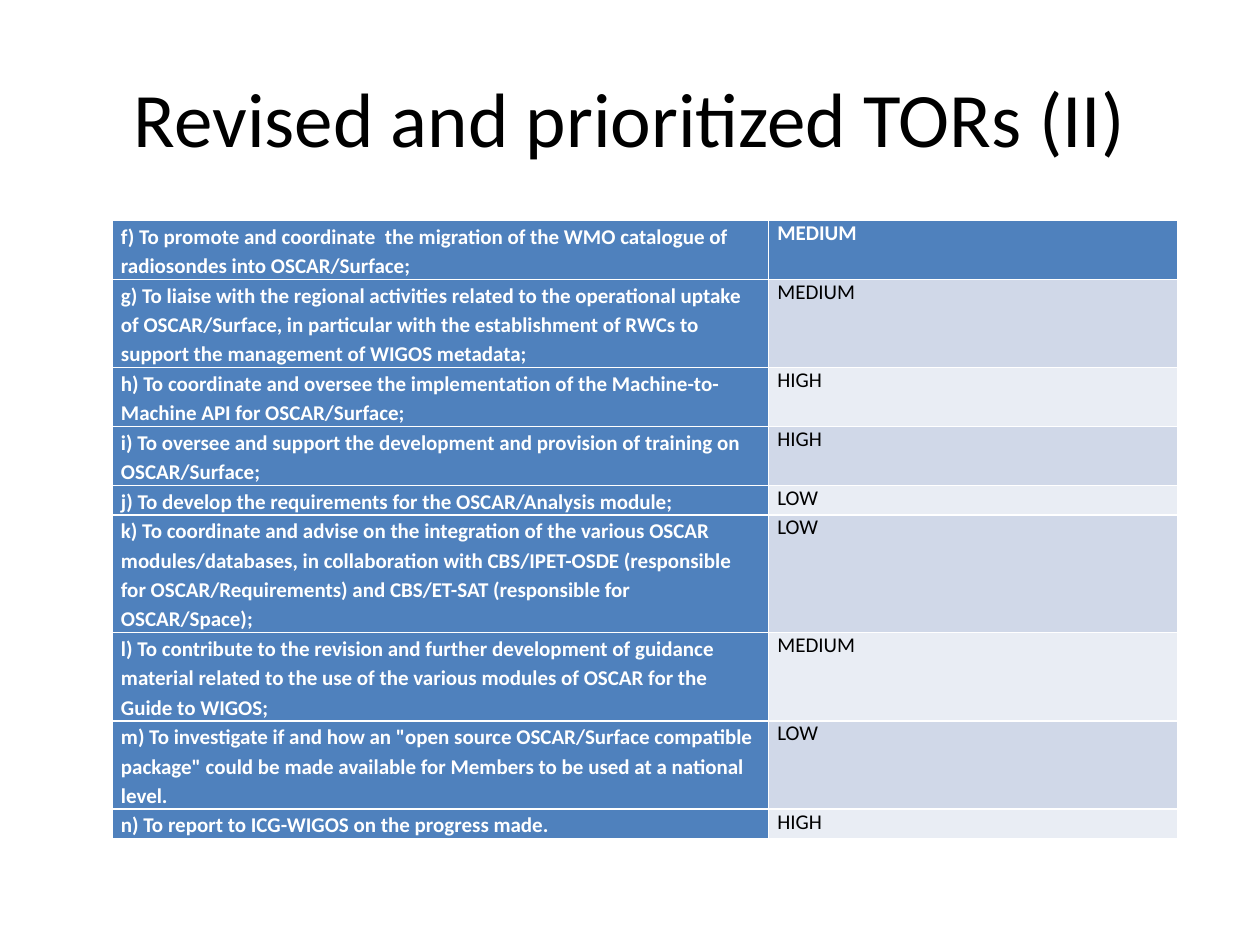
from pptx import Presentation
from pptx.dml.color import RGBColor
from pptx.enum.text import MSO_ANCHOR, PP_ALIGN
from pptx.util import Inches, Pt

CENTER = PP_ALIGN.CENTER
MIDDLE = MSO_ANCHOR.MIDDLE
WHITE = RGBColor(0xFF, 0xFF, 0xFF)
BLACK = RGBColor(0x00, 0x00, 0x00)
BLUE = RGBColor(0x4F, 0x81, 0xBD)
BAND_DARK = RGBColor(0xD0, 0xD8, 0xE8)
BAND_LIGHT = RGBColor(0xE9, 0xED, 0xF4)

LINE_HEIGHT = 0.23
COLUMN_WIDTHS = (5.21, 3.25)
TERMS = [
    ("f) To promote and coordinate  the migration of the WMO catalogue of "
     "radiosondes into OSCAR/Surface;", "MEDIUM", 2),
    ("g) To liaise with the regional activities related to the operational uptake "
     "of OSCAR/Surface, in particular with the establishment of RWCs to support "
     "the management of WIGOS metadata;", "MEDIUM", 3),
    ("h) To coordinate and oversee the implementation of the Machine-to-Machine "
     "API for OSCAR/Surface;", "HIGH", 2),
    ("i) To oversee and support the development and provision of training on "
     "OSCAR/Surface;", "HIGH", 2),
    ("j) To develop the requirements for the OSCAR/Analysis module;", "LOW", 1),
    ("k) To coordinate and advise on the integration of the various OSCAR "
     "modules/databases, in collaboration with CBS/IPET-OSDE (responsible for "
     "OSCAR/Requirements) and CBS/ET-SAT (responsible for OSCAR/Space);", "LOW", 4),
    ("l) To contribute to the revision and further development of guidance material "
     "related to the use of the various modules of OSCAR for the Guide to WIGOS;",
     "MEDIUM", 3),
    ("m) To investigate if and how an \"open source OSCAR/Surface compatible "
     "package\" could be made available for Members to be used at a national level.",
     "LOW", 3),
    ("n) To report to ICG-WIGOS on the progress made.", "HIGH", 1),
]


class SlideBuilder:
    """Holds the text style and the current slide."""

    def __init__(self, slide, font_name="Calibri"):
        self.slide = slide
        self.font_name = font_name

    def format_font(self, paragraph, size, color, bold=False):
        for run in paragraph.runs:
            run.font.name = self.font_name
            run.font.size = Pt(size)
            run.font.bold = bold
            run.font.color.rgb = color

    def add_title(self, text):
        title = self.slide.shapes.title
        title.left, title.top = Inches(0.5), Inches(0.3)
        title.width, title.height = Inches(9), Inches(1.25)
        title.text_frame.text = text
        title.text_frame.vertical_anchor = MIDDLE
        paragraph = title.text_frame.paragraphs[0]
        paragraph.alignment = CENTER
        self.format_font(paragraph, 44, BLACK)

    def fill_cell(self, cell, text, fill, color, bold, line_spacing):
        cell.margin_left = cell.margin_right = Inches(0.07)
        cell.margin_top = cell.margin_bottom = 0
        cell.fill.solid()
        cell.fill.fore_color.rgb = fill
        cell.text_frame.text = text
        paragraph = cell.text_frame.paragraphs[0]
        paragraph.line_spacing = line_spacing
        self.format_font(paragraph, 12, color, bold)

    def add_priority_table(self, terms):
        height = LINE_HEIGHT * sum(lines for _, _, lines in terms)
        table = self.slide.shapes.add_table(
            len(terms), len(COLUMN_WIDTHS), Inches(0.89), Inches(1.75),
            Inches(sum(COLUMN_WIDTHS)), Inches(height)).table
        table.first_col = True
        for column, width in zip(table.columns, COLUMN_WIDTHS):
            column.width = Inches(width)
        for index, (term, priority, lines) in enumerate(terms):
            table.rows[index].height = Inches(LINE_HEIGHT * lines)
            is_header = index == 0
            band = BAND_DARK if index % 2 else BAND_LIGHT
            self.fill_cell(table.cell(index, 0), term, BLUE, WHITE, True, 1.15)
            self.fill_cell(table.cell(index, 1), priority,
                           BLUE if is_header else band,
                           WHITE if is_header else BLACK, is_header, 1.0)


def main():
    presentation = Presentation()
    presentation.slide_width = Inches(10)
    presentation.slide_height = Inches(7.5)
    title_only = presentation.slide_layouts[5]
    builder = SlideBuilder(presentation.slides.add_slide(title_only))
    builder.add_title("Revised and prioritized TORs (II)")
    builder.add_priority_table(TERMS)
    presentation.save("out.pptx")


if __name__ == "__main__":
    main()
